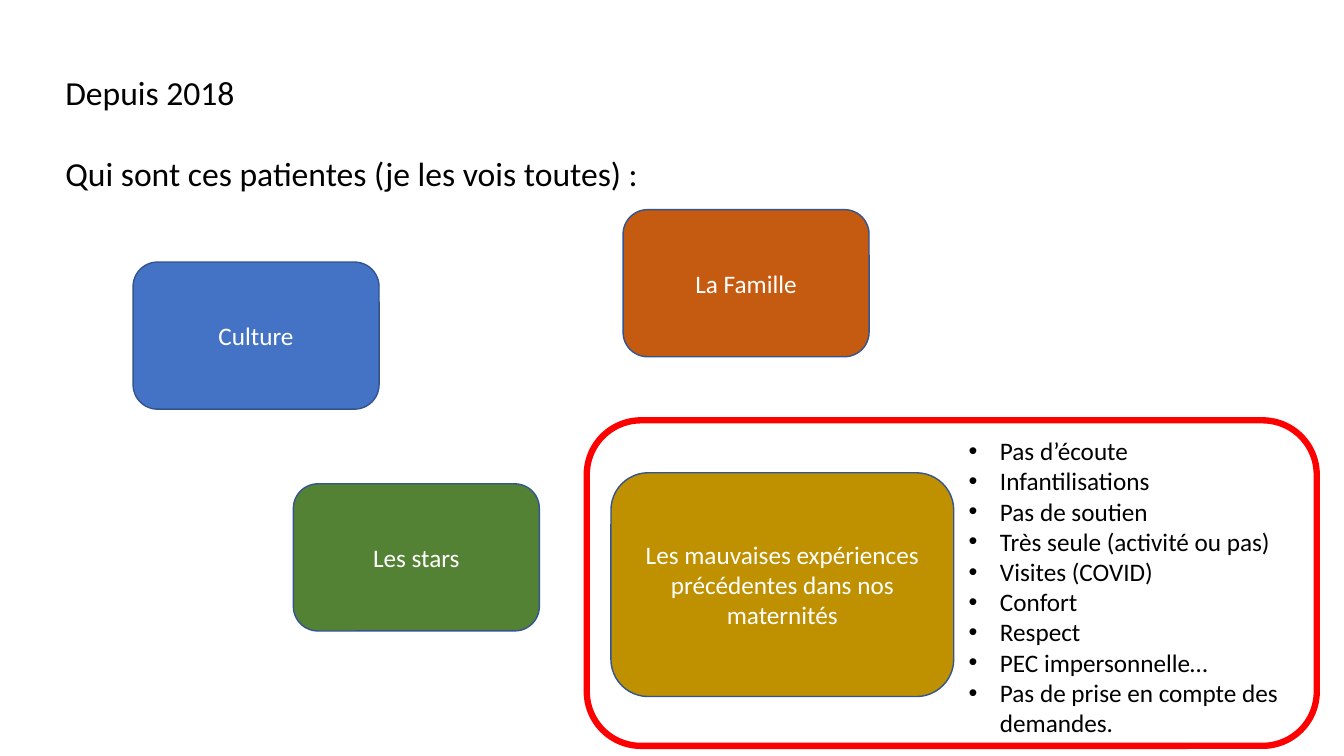
from pptx import Presentation
from pptx.dml.color import RGBColor
from pptx.enum import shapes, text
from pptx.oxml import parse_xml
from pptx.oxml.ns import nsdecls
from pptx.util import Inches, Pt

FONT = "Calibri"
BLACK = RGBColor(0x00, 0x00, 0x00)
WHITE = RGBColor(0xFF, 0xFF, 0xFF)
BLUE = RGBColor(0x44, 0x72, 0xC4)
ORANGE = RGBColor(0xC5, 0x5A, 0x11)
GREEN = RGBColor(0x54, 0x82, 0x35)
GOLD = RGBColor(0xBF, 0x90, 0x00)
OUTLINE = RGBColor(0x32, 0x54, 0x91)
RED = RGBColor(0xFF, 0x00, 0x00)

HEADING = ["Depuis 2018", "Qui sont ces patientes (je les vois toutes) :"]
SMALL = (2.44, 1.46)
LARGE = (3.4, 2.22)
# label, fill, (left, top), (width, height)
GROUPS = [
    ("Culture", BLUE, (1.32, 2.6), SMALL),
    ("La Famille", ORANGE, (6.18, 2.08), SMALL),
    ("Les stars", GREEN, (2.91, 4.8), SMALL),
    ("Les mauvaises expériences précédentes dans nos maternités",
     GOLD, (6.06, 4.69), LARGE),
]
COMPLAINTS = [
    "Pas d’écoute",
    "Infantilisations",
    "Pas de soutien",
    "Très seule (activité ou pas)",
    "Visites (COVID)",
    "Confort",
    "Respect",
    "PEC impersonnelle…",
    "Pas de prise en compte des demandes.",
]


def write(frame, lines, size, color):
    frame.word_wrap = True
    frame.text = "\n".join(lines)
    for para in frame.paragraphs:
        for span in para.runs:
            span.font.name = FONT
            span.font.size = Pt(size)
            span.font.color.rgb = color
    return frame.paragraphs


def add_text(page, area, lines, size):
    box = page.shapes.add_textbox(*map(Inches, area))
    return write(box.text_frame, lines, size, BLACK)


def add_rounded(page, area, line_color, line_width):
    box = page.shapes.add_shape(
        shapes.MSO_SHAPE.ROUNDED_RECTANGLE, *map(Inches, area))
    box.shadow.inherit = False
    box.line.color.rgb = line_color
    box.line.width = Pt(line_width)
    return box


def add_bullet(para):
    props = para._p.get_or_add_pPr()
    props.set("marL", str(Inches(0.31)))
    props.set("indent", str(Inches(-0.31)))
    props.append(parse_xml(f'<a:buFont {nsdecls("a")} typeface="Arial"/>'))
    props.append(parse_xml(f'<a:buChar {nsdecls("a")} char="•"/>'))


def main():
    deck = Presentation()
    deck.slide_width, deck.slide_height = Inches(13.33), Inches(7.5)
    page = deck.slides.add_slide(deck.slide_layouts[6])

    heading = add_text(page, (0.55, 0.66, 12.36, 1.31), HEADING, 24)
    heading[1].space_before = Pt(29)

    for label, fill, place, size in GROUPS:
        box = add_rounded(page, place + size, OUTLINE, 1)
        box.fill.solid()
        box.fill.fore_color.rgb = fill
        box.text_frame.vertical_anchor = text.MSO_ANCHOR.MIDDLE
        for para in write(box.text_frame, [label], 18, WHITE):
            para.alignment = text.PP_ALIGN.CENTER

    for para in add_text(page, (9.51, 4.27, 3.4, 3.13), COMPLAINTS, 18):
        add_bullet(para)

    frame = add_rounded(page, (5.82, 4.17, 7.24, 3.23), RED, 4.5)
    frame.fill.background()

    deck.save("out.pptx")


if __name__ == "__main__":
    main()
